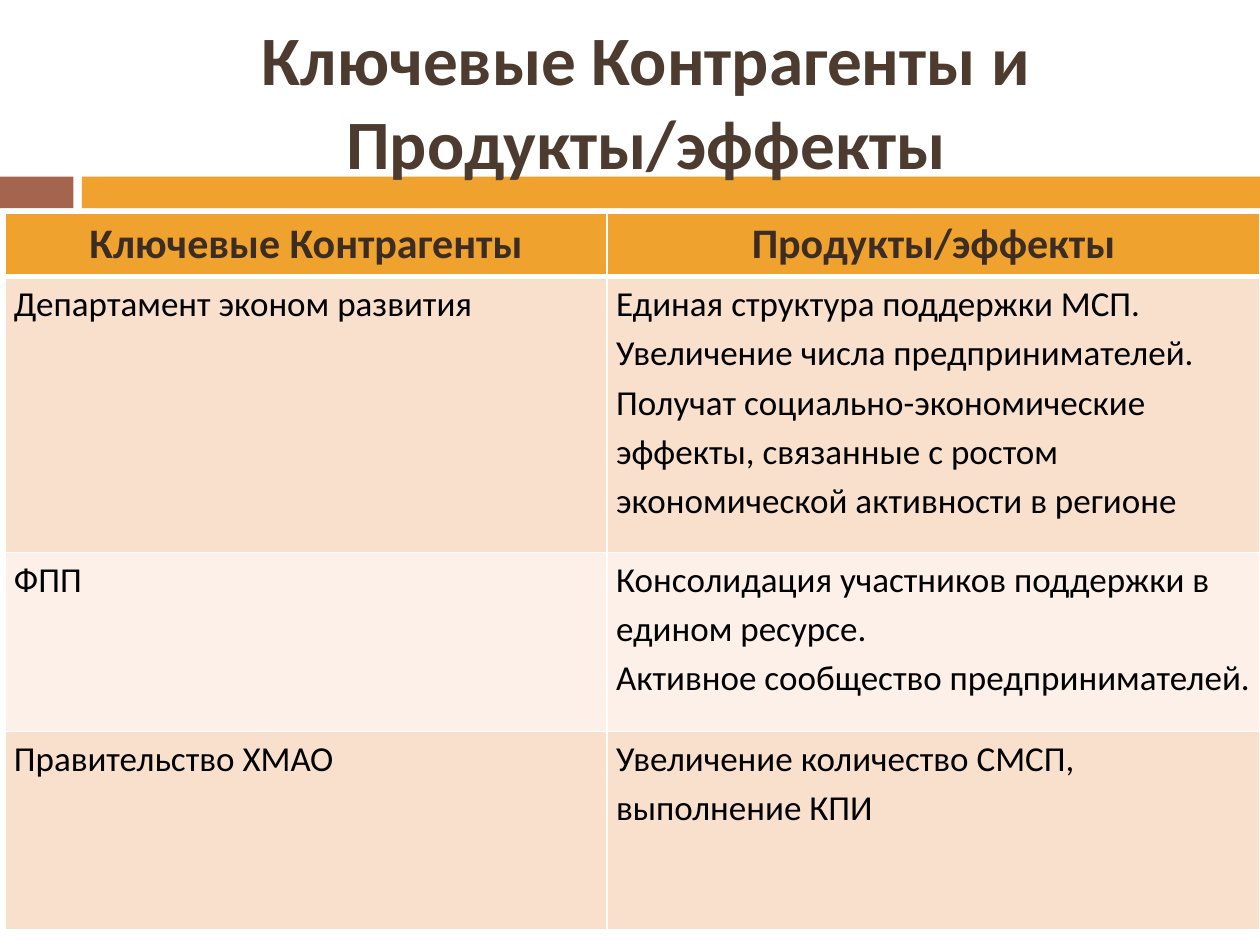
from dataclasses import dataclass

import pptx
import pptx.dml.color
import pptx.enum.shapes
import pptx.enum.text
import pptx.oxml
import pptx.oxml.ns
import pptx.util

Cm = pptx.util.Cm
Pt = pptx.util.Pt
ALIGN = pptx.enum.text.PP_ALIGN
ANCHOR = pptx.enum.text.MSO_ANCHOR

WHITE, BLACK = "FFFFFF", "000000"
ORANGE, RUST = "F0A22E", "A5644E"
TITLE_BROWN, HEADER_BROWN = "4E3B30", "3B2C24"
BANDS = ("F9E0CD", "FCF0E8")


@dataclass
class Bar:
    left: float
    width: float
    colour: str


@dataclass
class Row:
    height: float
    partner: str
    effects: list[str]


BARS = [Bar(0, 1.48, RUST), Bar(1.65, 23.75, ORANGE)]
COLUMN_WIDTHS = (12.14, 13.16)
HEADER = Row(1.27, "Ключевые Контрагенты", ["Продукты/эффекты"])
ROWS = [
    Row(5.56, "Департамент эконом развития", [
        "Единая структура поддержки МСП.",
        "Увеличение числа предпринимателей.",
        "Получат социально-экономические эффекты, связанные с ростом "
        "экономической активности в регионе",
    ]),
    Row(3.61, "ФПП", [
        "Консолидация участников поддержки в едином ресурсе.",
        "Активное сообщество предпринимателей.",
    ]),
    Row(3.99, "Правительство ХМАО", ["Увеличение количество СМСП, выполнение КПИ"]),
]


def rgb(colour: str) -> pptx.dml.color.RGBColor:
    return pptx.dml.color.RGBColor.from_string(colour)


def write(frame, lines: list[str], *, size: float, colour: str, bold: bool = False,
          align=ALIGN.LEFT, spacing: float = 1.0) -> None:
    """Fill a text frame with one paragraph per line."""
    for index, line in enumerate(lines):
        para = frame.paragraphs[0] if index == 0 else frame.add_paragraph()
        para.alignment = align
        para.line_spacing = spacing
        para.space_before = para.space_after = Pt(0)
        span = para.add_run()
        span.text = line
        span.font.name = "Calibri"
        span.font.size = Pt(size)
        span.font.bold = bold
        span.font.color.rgb = rgb(colour)


def add_title(page, text: str):
    title = page.shapes.title
    title.left, title.top, title.width, title.height = Cm(1.7), Cm(0.64), Cm(22.66), Cm(2.74)
    frame = title.text_frame
    frame.word_wrap = True
    frame.auto_size = pptx.enum.text.MSO_AUTO_SIZE.NONE
    frame.vertical_anchor = ANCHOR.MIDDLE
    write(frame, [text], size=39.6, colour=TITLE_BROWN, bold=True, align=ALIGN.CENTER)
    return title


def add_bar(page, bar: Bar, title) -> None:
    """Draw a decorative bar behind the title."""
    box = page.shapes.add_shape(pptx.enum.shapes.MSO_SHAPE.RECTANGLE,
                                Cm(bar.left), Cm(3.56), Cm(bar.width), Cm(0.64))
    box.shadow.inherit = False
    box.fill.solid()
    box.fill.fore_color.rgb = rgb(bar.colour)
    box.line.fill.background()
    title.element.addprevious(box.element)


def style_cell(cell, fill: str, top: float = 1, bottom: float = 1) -> None:
    """Set the white borders (widths in points) and the fill of a cell."""
    properties = cell._tc.get_or_add_tcPr()
    for side, width in (("L", 1), ("R", 1), ("T", top), ("B", bottom)):
        properties.append(pptx.oxml.parse_xml(
            f'<a:ln{side} {pptx.oxml.ns.nsdecls("a")} w="{Pt(width)}">'
            f'<a:solidFill><a:srgbClr val="{WHITE}"/></a:solidFill></a:ln{side}>'))
    cell.fill.solid()
    cell.fill.fore_color.rgb = rgb(fill)


def add_partner_table(page) -> None:
    rows = [HEADER, *ROWS]
    table = page.shapes.add_table(
        len(rows), len(COLUMN_WIDTHS), Cm(0.1), Cm(4.29),
        Cm(sum(COLUMN_WIDTHS)), Cm(sum(row.height for row in rows))).table
    for column, width in zip(table.columns, COLUMN_WIDTHS):
        column.width = Cm(width)
    for index, row in enumerate(rows):
        table.rows[index].height = Cm(row.height)
        for cell, lines in zip(table.rows[index].cells, ([row.partner], row.effects)):
            if index == 0:
                style_cell(cell, ORANGE, bottom=3)
                write(cell.text_frame, lines, size=24, colour=HEADER_BROWN,
                      bold=True, align=ALIGN.CENTER)
            else:
                style_cell(cell, BANDS[(index - 1) % 2], top=3 if index == 1 else 1)
                cell.margin_left = cell.margin_right = Cm(0.18)
                cell.margin_top = cell.margin_bottom = 0
                write(cell.text_frame, lines, size=20, colour=BLACK, spacing=1.15)


def main() -> None:
    deck = pptx.Presentation()
    deck.slide_width, deck.slide_height = Cm(25.4), Cm(19.05)
    page = deck.slides.add_slide(deck.slide_layouts[5])
    title = add_title(page, "Ключевые Контрагенты и Продукты/эффекты")
    for bar in BARS:
        add_bar(page, bar, title)
    add_partner_table(page)
    deck.save("out.pptx")


if __name__ == "__main__":
    main()
